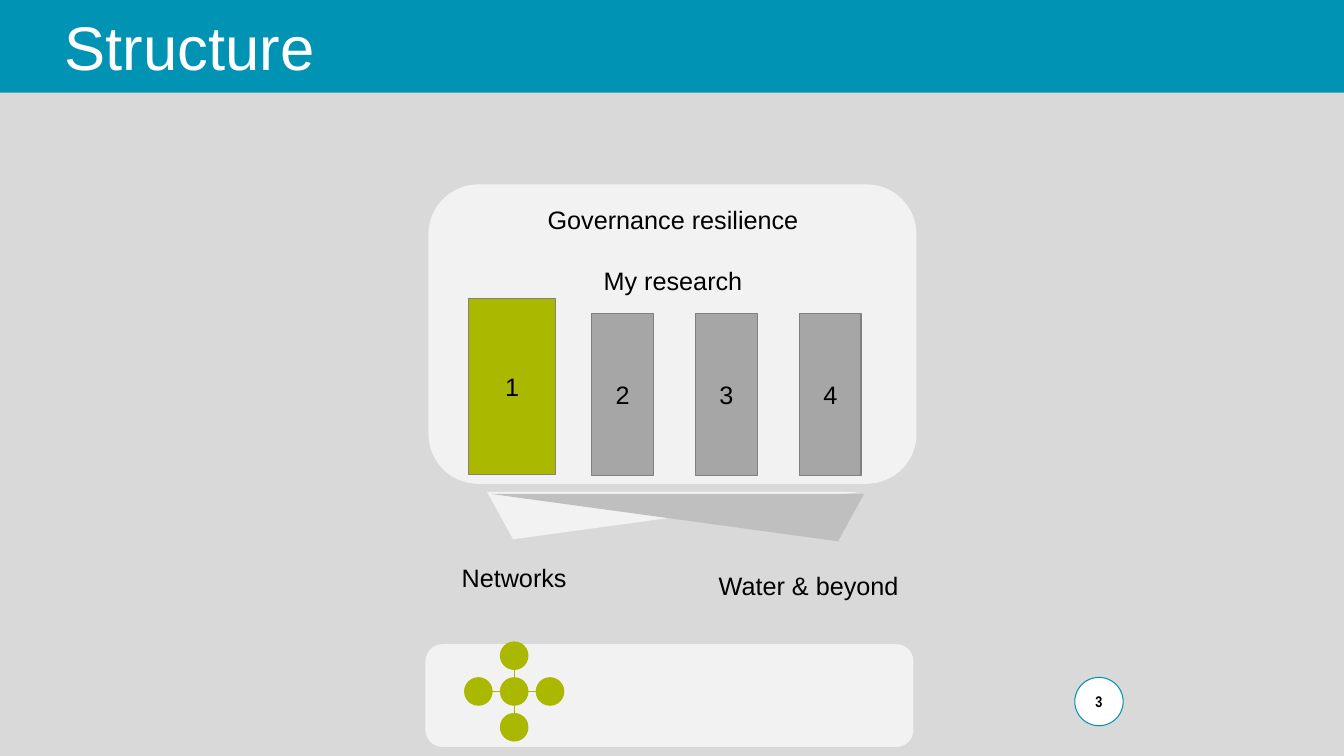
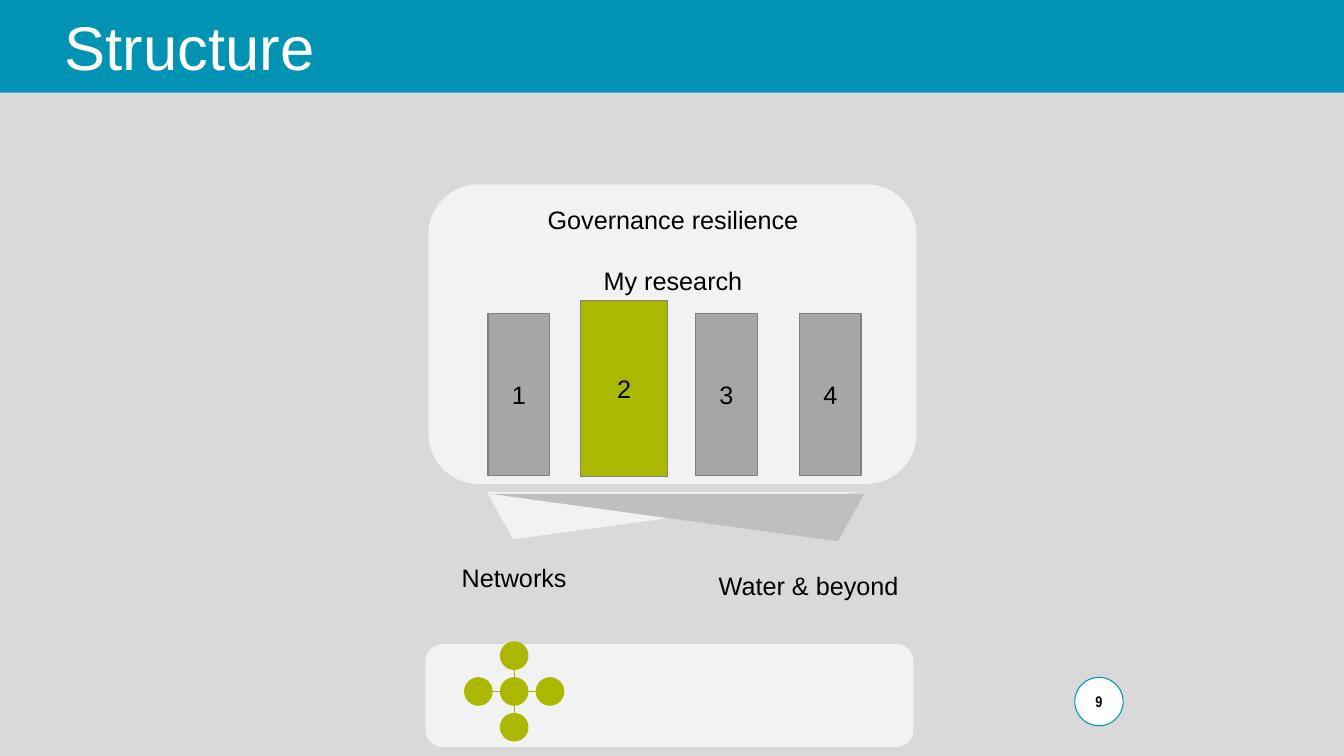
"""Build two structure slides, each highlighting one pillar of the research."""
from dataclasses import dataclass

from lxml import etree
from pptx import Presentation
from pptx.dml.color import RGBColor
from pptx.enum import shapes, text
from pptx.oxml import ns
from pptx.util import Inches, Pt

TITLE = "Structure"
HEADINGS = ["Governance resilience", "My research"]
PILLARS = ["1", "2", "3", "4"]
PAGES = [
    {"number": "3", "highlight": "1", "at": (4.65, 2.96)},
    {"number": "9", "highlight": "2", "at": (5.76, 2.98)},
]
FOUNDATIONS = [
    ("Water & beyond", (7.03, 5.61, 3.75, 0.4)),
    ("Networks", (4.48, 5.53, 2.25, 0.4)),
]
PANELS = [(4.22, 6.39, 4.84, 1.02), (4.25, 1.83, 4.84, 2.97)]
NETWORK_CENTRE = (5.1, 6.86)
NETWORK_STEP = 0.355
NODE_SIZE = 0.27
DIRECTIONS = [(0, -1), (1, 0), (0, 1), (-1, 0)]
PILLAR_LEFT, PILLAR_TOP, PILLAR_STEP = 4.84, 3.11, 1.03
PILLAR_SIZE, HIGHLIGHT_SIZE = (0.61, 1.61), (0.86, 1.75)


@dataclass(frozen=True)
class Theme:
    """Colours, fonts and type sizes."""
    backdrop: str = "D9D9D9"
    band: str = "0093B3"
    panel: str = "F2F2F2"
    accent: str = "ABB800"
    pillar: str = "A6A6A6"
    outline: str = "808080"
    wedge: str = "BFBFBF"
    white: str = "FFFFFF"
    ink: str = "000000"
    font: str = "Arial"
    number_font: str = "Arial Narrow"
    title_size: int = 44
    body_size: int = 18
    number_size: int = 11


THEME = Theme()
Kind = shapes.MSO_SHAPE


def rgb(colour):
    """Turn a hex colour into an RGBColor."""
    return RGBColor.from_string(colour)


def inches(values):
    """Convert a sequence of numbers to lengths."""
    return [Inches(value) for value in values]


def add_block(parent, kind, box, fill, line=None, weight=0.75):
    """Add a flat filled shape."""
    block = parent.shapes.add_shape(kind, *inches(box))
    block.shadow.inherit = False
    block.fill.solid()
    block.fill.fore_color.rgb = rgb(fill)
    if line:
        block.line.color.rgb = rgb(line)
        block.line.width = Pt(weight)
    else:
        block.line.fill.background()
    return block


def write(holder, lines, size=THEME.body_size, colour=THEME.ink,
          font=THEME.font, bold=False, align=text.PP_ALIGN.CENTER, gap=0):
    """Fill a shape with uniformly styled paragraphs."""
    frame = holder.text_frame
    frame.word_wrap = True
    frame.text = "\n".join(lines)
    for index, paragraph in enumerate(frame.paragraphs):
        paragraph.alignment = align
        if index:
            paragraph.space_before = Pt(gap)
        paragraph.font.name = font
        paragraph.font.size = Pt(size)
        paragraph.font.bold = bold
        paragraph.font.color.rgb = rgb(colour)
    return frame


def add_label(parent, lines, box, **style):
    """Add a wrapping text box."""
    return write(parent.shapes.add_textbox(*inches(box)), lines, **style)


def add_title(slide):
    """Place and style the title placeholder."""
    title = slide.shapes.title
    title.left, title.top, title.width, title.height = inches((0.54, 0.03, 9.4, 0.84))
    frame = write(title, [TITLE], size=THEME.title_size, colour=THEME.white,
                  align=text.PP_ALIGN.LEFT)
    frame.vertical_anchor = text.MSO_ANCHOR.MIDDLE


def add_pillars(slide, page):
    """Draw the research pillars with one enlarged."""
    group = slide.shapes.add_group_shape()
    for index, name in enumerate(PILLARS):
        if name == page["highlight"]:
            box, fill = page["at"] + HIGHLIGHT_SIZE, THEME.accent
        else:
            box = (PILLAR_LEFT + index * PILLAR_STEP, PILLAR_TOP) + PILLAR_SIZE
            fill = THEME.pillar
        pillar = add_block(group, Kind.RECTANGLE, box, fill, THEME.outline)
        write(pillar, [name]).vertical_anchor = text.MSO_ANCHOR.MIDDLE
    add_label(group, HEADINGS, (4.8, 1.98, 3.75, 1.62), gap=22)


def add_network(slide):
    """Draw a hub joined to four nodes."""
    group = slide.shapes.add_group_shape()
    x, y = NETWORK_CENTRE
    radius = NODE_SIZE / 2
    for dx, dy in [(0, 0)] + DIRECTIONS:
        node_x, node_y = x + dx * NETWORK_STEP, y + dy * NETWORK_STEP
        add_block(group, Kind.OVAL, (node_x - radius, node_y - radius, NODE_SIZE, NODE_SIZE),
                  THEME.accent, THEME.accent, 1)
        if dx or dy:
            ends = (x + dx * radius, y + dy * radius,
                    node_x - dx * radius, node_y - dy * radius)
            link = group.shapes.add_connector(shapes.MSO_CONNECTOR.STRAIGHT, *inches(ends))
            link.line.color.rgb = rgb(THEME.accent)
            link.line.width = Pt(1)
            etree.SubElement(link.element.spPr, ns.qn("a:effectLst"))


def add_wedges(slide):
    """Draw the two overlapping downward wedges."""
    for left, top, apex, fill in [(4.83, 4.88, 0.93, THEME.panel),
                                  (4.87, 4.9, 0.07, THEME.wedge)]:
        wedge = add_block(slide, Kind.ISOSCELES_TRIANGLE, (left, top, 3.7, 0.47), fill)
        wedge.adjustments[0] = apex
        wedge.rotation = 180


def add_number(slide, number):
    """Draw the page number badge."""
    badge = add_block(slide, Kind.OVAL, (10.66, 6.72, 0.48, 0.48), THEME.white, THEME.band)
    frame = write(badge, [number], size=THEME.number_size, font=THEME.number_font, bold=True)
    frame.vertical_anchor = text.MSO_ANCHOR.MIDDLE
    frame.margin_left = frame.margin_right = 0


def style_layout(layout, slide):
    """Give the layout its background and title band."""
    layout.background.fill.solid()
    layout.background.fill.fore_color.rgb = rgb(THEME.backdrop)
    band = add_block(slide, Kind.RECTANGLE, (0, 0, 13.33, 0.92), THEME.band)
    layout.shapes.element.append(band.element)


def main():
    """Build and save the presentation."""
    deck = Presentation()
    deck.slide_width, deck.slide_height = inches((13.33, 7.5))
    layout = deck.slide_layouts.get_by_name("Title Only")
    for index, page in enumerate(PAGES):
        slide = deck.slides.add_slide(layout)
        if index == 0:
            style_layout(layout, slide)
        add_title(slide)
        for box in PANELS:
            add_block(slide, Kind.ROUNDED_RECTANGLE, box, THEME.panel)
        add_number(slide, page["number"])
        add_pillars(slide, page)
        add_network(slide)
        for name, box in FOUNDATIONS:
            add_label(slide, [name], box, align=text.PP_ALIGN.LEFT)
        add_wedges(slide)
    deck.save("out.pptx")


if __name__ == "__main__":
    main()
